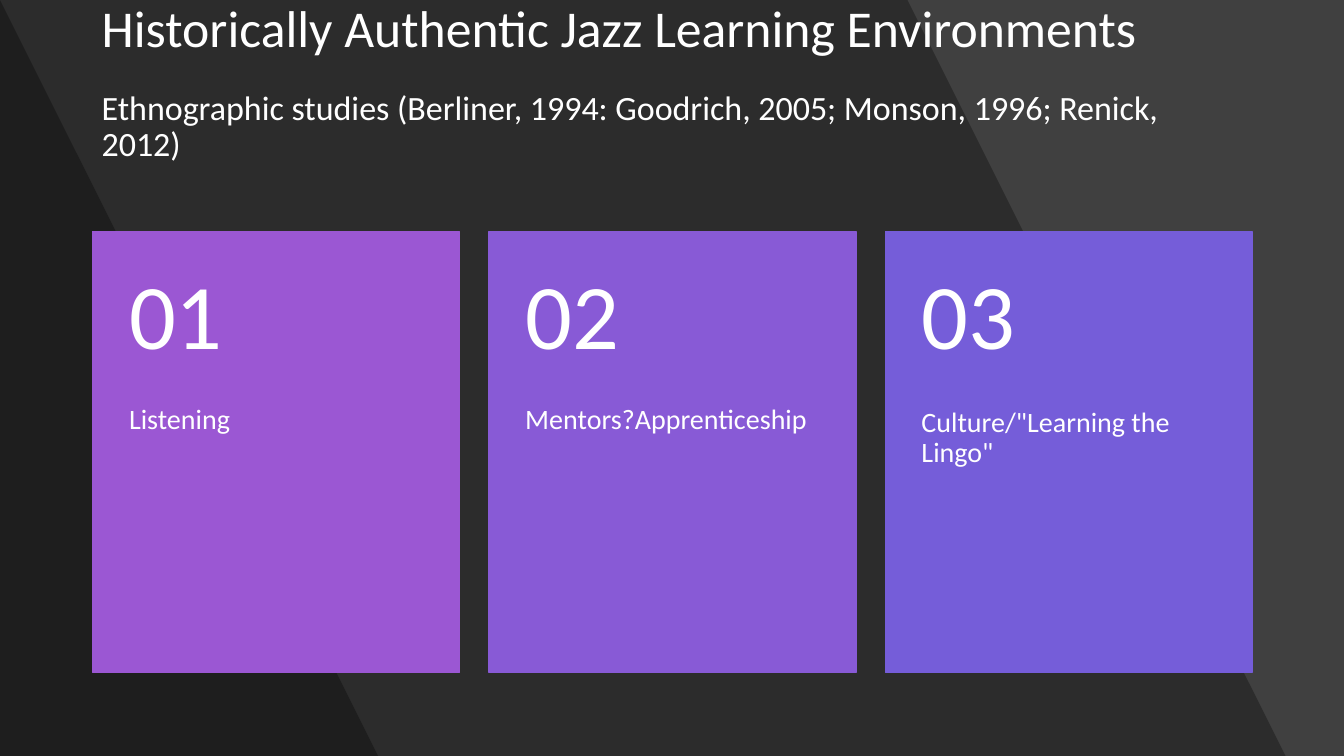
from dataclasses import dataclass

from lxml import etree
from pptx import Presentation
from pptx.dml.color import RGBColor
from pptx.enum import shapes, text
from pptx.oxml.ns import qn
from pptx.util import Inches, Pt


@dataclass(frozen=True)
class Theme:
    """Colours, font and type sizes of the slide."""
    font: str = "Calibri"
    background: str = "404040"
    shade: str = "000000"
    shade_opacity: int = 30
    ink: str = "FFFFFF"
    cards: tuple = ("9B57D3", "885AD6", "755DD9")
    title_size: float = 36.9
    subtitle_size: float = 24.3
    number_size: float = 66
    label_size: float = 20


THEME = Theme()
WIDTH, HEIGHT = 13.33, 7.5
CARDS = [
    ("01", "Listening"),
    ("02", "Mentors?Apprenticeship"),
    ("03", 'Culture/"Learning the Lingo"'),
]


def add_text(slide, box, lines, *, insets=(0.1, 0.05, 0.1, 0.05),
             anchor=text.MSO_ANCHOR.TOP, space_after=0):
    """Place (wording, size) lines as paragraphs in a wrapping text box."""
    frame = slide.shapes.add_textbox(*map(Inches, box)).text_frame
    frame.word_wrap = True
    frame.vertical_anchor = anchor
    (frame.margin_left, frame.margin_top,
     frame.margin_right, frame.margin_bottom) = map(Inches, insets)
    for index, (wording, size) in enumerate(lines):
        paragraph = frame.add_paragraph() if index else frame.paragraphs[0]
        paragraph.line_spacing = 0.9
        paragraph.space_after = Pt(space_after if index < len(lines) - 1 else 0)
        run = paragraph.add_run()
        run.text = wording
        run.font.name = THEME.font
        run.font.size = Pt(size)
        run.font.color.rgb = RGBColor.from_string(THEME.ink)


def add_shade(slide, top_width, bottom_width):
    """Darken the slide from its left edge to a slanted right edge."""
    builder = slide.shapes.build_freeform(0, 0, scale=Inches(1))
    builder.add_line_segments(
        [(top_width, 0), (bottom_width, HEIGHT), (0, HEIGHT)], close=True)
    shape = builder.convert_to_shape()
    shape.shadow.inherit = False
    shape.line.fill.background()
    shape.fill.solid()
    shape.fill.fore_color.rgb = RGBColor.from_string(THEME.shade)
    color = shape.fill._xPr.find(f".//{qn('a:srgbClr')}")
    etree.SubElement(color, qn("a:alpha"), val=str(THEME.shade_opacity * 1000))


def add_background(slide):
    """Fill the slide and lay the two slanted shades over it."""
    slide.background.fill.solid()
    slide.background.fill.fore_color.rgb = RGBColor.from_string(THEME.background)
    for top_width, bottom_width in ((9.42, 12.89), (0.44, 3.92)):
        add_shade(slide, top_width, bottom_width)


def add_heading(slide, box):
    """Write the title and its line of studies in the box."""
    lines = [
        ("Historically Authentic Jazz Learning Environments", THEME.title_size),
        ("Ethnographic studies (Berliner, 1994: Goodrich, 2005; "
         "Monson, 1996; Renick, 2012)", THEME.subtitle_size),
    ]
    add_text(slide, box, lines, insets=(0.1, 0.05, 0.1, 0.64),
             anchor=text.MSO_ANCHOR.MIDDLE, space_after=23)


def add_card(slide, box, number, label, color):
    """Draw a coloured card with a number above a label."""
    left, top, width, height = box
    number_height = height * 0.4
    card = slide.shapes.add_shape(
        shapes.MSO_SHAPE.RECTANGLE, *map(Inches, box))
    card.shadow.inherit = False
    card.fill.solid()
    card.fill.fore_color.rgb = RGBColor.from_string(color)
    card.line.color.rgb = RGBColor.from_string(color)
    card.line.width = Pt(1)
    add_text(slide, (left, top + number_height, width, height - number_height),
             [(label, THEME.label_size)], insets=(0.36, 0, 0.36, 0.36))
    add_text(slide, (left, top, width, number_height),
             [(number, THEME.number_size)], insets=(0.36, 0.18, 0.36, 0.18),
             anchor=text.MSO_ANCHOR.MIDDLE)


def add_cards(slide, box, gap=0.29):
    """Spread the cards evenly across the box."""
    left, top, width, height = box
    card_width = (width - gap * (len(CARDS) - 1)) / len(CARDS)
    for index, ((number, label), color) in enumerate(zip(CARDS, THEME.cards)):
        card_left = left + index * (card_width + gap)
        add_card(slide, (card_left, top, card_width, height),
                 number, label, color)


def main():
    """Build and save the presentation."""
    presentation = Presentation()
    presentation.slide_width = Inches(WIDTH)
    presentation.slide_height = Inches(HEIGHT)
    slide = presentation.slides.add_slide(presentation.slide_layouts[6])
    add_background(slide)
    add_heading(slide, (0.91, 0.4, 11.51, 1.45))
    add_cards(slide, (0.92, 2.3, 11.5, 4.37))
    presentation.save("out.pptx")


if __name__ == "__main__":
    main()
